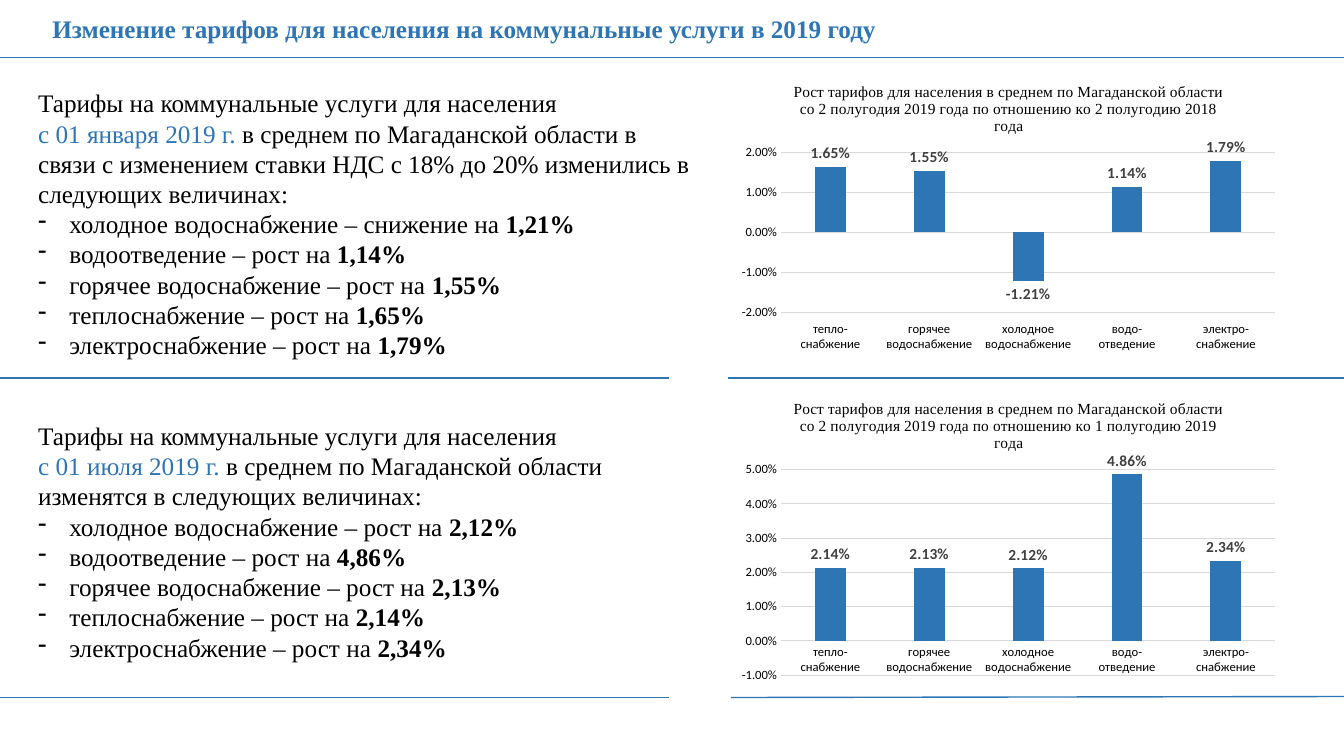
from dataclasses import dataclass

from lxml.etree import SubElement
from pptx import Presentation
from pptx.chart.data import CategoryChartData as ChartData
from pptx.dml.color import RGBColor as Color
from pptx.enum.chart import XL_CHART_TYPE as Kind
from pptx.enum.chart import XL_LABEL_POSITION as Spot
from pptx.enum.chart import XL_TICK_LABEL_POSITION as Place
from pptx.enum.chart import XL_TICK_MARK as Tick
from pptx.enum.shapes import MSO_CONNECTOR as Link
from pptx.oxml import parse_xml
from pptx.oxml.ns import nsdecls, qn
from pptx.util import Inches, Pt


@dataclass(frozen=True)
class Theme:
    blue: str = "2E75B6"
    black: str = "000000"
    dark: str = "404040"
    grid: str = "D9D9D9"
    serif: str = "Times New Roman"
    sans: str = "Calibri"
    body: int = 18
    head: int = 11
    label: int = 11
    base: int = 10
    axis: int = 9


THEME = Theme()
START = "Тарифы на коммунальные услуги для населения"
CATS = ["тепло-\nснабжение", "горячее\nводоснабжение", "холодное\nводоснабжение",
        "водо-\nотведение", "электро-\nснабжение"]
RULES = [(0, 0.57, 13.33, 0.57), (0, 3.75, 6.64, 3.75), (7.22, 3.75, 13.33, 3.75),
         (0, 6.92, 6.64, 6.92), (7.25, 6.92, 13.33, 6.91)]


def style(font, size, color, face, bold=False):
    font.size = Pt(size)
    font.color.rgb = Color.from_string(color)
    font.name = face
    font.bold = bold


def add_run(para, text, color=THEME.black, bold=False):
    run = para.add_run()
    run.text = text
    style(run.font, THEME.body, color, THEME.serif, bold)


def add_box(slide, left, top, width, height):
    frame = slide.shapes.add_textbox(
        Inches(left), Inches(top), Inches(width), Inches(height)).text_frame
    frame.word_wrap = True
    return frame


def add_rule(slide, x1, y1, x2, y2):
    rule = slide.shapes.add_connector(
        Link.STRAIGHT, Inches(x1), Inches(y1), Inches(x2), Inches(y2))
    rule.line.color.rgb = Color.from_string(THEME.blue)
    rule.line.width = Pt(1)
    SubElement(rule.element.spPr, qn("a:effectLst"))


def add_dash(para):
    props = para._p.get_or_add_pPr()
    props.set("marL", str(Inches(0.31)))
    props.set("indent", str(-Inches(0.31)))
    SubElement(props, qn("a:buChar")).set("char", "-")


def add_list(slide, top, height, date, rest, rates):
    frame = add_box(slide, 0.28, top, 6.7, height)
    add_run(frame.paragraphs[0], START)
    para = frame.add_paragraph()
    add_run(para, date, THEME.blue)
    add_run(para, rest)
    for name, rate in rates:
        para = frame.add_paragraph()
        add_dash(para)
        add_run(para, f"{name} на ")
        add_run(para, rate, bold=True)


def set_plot(chart, x, y, w, h):
    plot = chart.element.chart.plotArea
    for old in plot.findall(qn("c:layout")):
        plot.remove(old)
    parts = "".join(f'<c:{key} val="{val}"/>' for key, val in (
        ("layoutTarget", "inner"), ("xMode", "edge"), ("yMode", "edge"),
        ("x", x), ("y", y), ("w", w), ("h", h)))
    plot.insert(0, parse_xml(
        f'<c:layout {nsdecls("c")}><c:manualLayout>{parts}</c:manualLayout></c:layout>'))


def set_axes(chart, low, high, place):
    cat, val = chart.category_axis, chart.value_axis
    for axis in (cat, val):
        axis.major_tick_mark = axis.minor_tick_mark = Tick.NONE
        style(axis.tick_labels.font, THEME.axis, THEME.black, THEME.sans)
    cat.tick_label_position = place
    val.minimum_scale, val.maximum_scale, val.major_unit = low, high, 0.01
    val.tick_labels.number_format = "0.00%"
    val.tick_labels.number_format_is_linked = False
    val.format.line.fill.background()
    for line in (cat.format.line, val.major_gridlines.format.line):
        line.color.rgb = Color.from_string(THEME.grid)
        line.width = Pt(0.75)


def set_bars(chart):
    plot = chart.plots[0]
    plot.gap_width, plot.overlap = 219, -27
    plot.vary_by_categories = False
    bars = plot.series[0]
    bars.invert_if_negative = False
    bars.format.fill.solid()
    bars.format.fill.fore_color.rgb = Color.from_string(THEME.blue)
    tags = bars.data_labels
    tags.show_value = True
    tags.position = Spot.OUTSIDE_END
    tags.number_format = "0.00%"
    tags.number_format_is_linked = False
    style(tags.font, THEME.label, THEME.dark, THEME.sans, True)


def add_graph(slide, top, height, since, vals, scale, place, area):
    data = ChartData(number_format="0.00%")
    data.categories = CATS
    data.add_series("Рост тарифов", vals)
    chart = slide.shapes.add_chart(
        Kind.COLUMN_CLUSTERED, Inches(7.25), Inches(top),
        Inches(5.51), Inches(height), data).chart
    style(chart.font, THEME.base, THEME.black, THEME.sans)
    chart.has_legend = False
    chart.has_title = True
    run = chart.chart_title.text_frame.paragraphs[0].add_run()
    run.text = ("Рост тарифов для населения в среднем по Магаданской области "
                f"со 2 полугодия 2019 года по отношению ко {since} года")
    style(run.font, THEME.head, THEME.black, THEME.serif)
    chart.chart_title.include_in_layout = False
    set_axes(chart, *scale, place)
    set_bars(chart)
    set_plot(chart, *area)


def main():
    deck = Presentation()
    deck.slide_width, deck.slide_height = Inches(13.33), Inches(7.5)
    slide = deck.slides.add_slide(deck.slide_layouts[6])
    for rule in RULES:
        add_rule(slide, *rule)
    head = add_box(slide, 0.42, 0.08, 12.49, 0.4)
    add_run(head.paragraphs[0],
            "Изменение тарифов для населения на коммунальные услуги в 2019 году",
            THEME.blue, True)
    add_list(slide, 0.82, 2.83, "с 01 января 2019 г.",
             " в среднем по Магаданской области в связи с изменением ставки НДС "
             "с 18% до 20% изменились в следующих величинах:",
             [("холодное водоснабжение – снижение", "1,21%"),
              ("водоотведение – рост", "1,14%"),
              ("горячее водоснабжение – рост", "1,55%"),
              ("теплоснабжение – рост", "1,65%"),
              ("электроснабжение – рост", "1,79%")])
    add_list(slide, 4.12, 2.52, "с 01 июля 2019 г.",
             " в среднем по Магаданской области изменятся в следующих величинах:",
             [("холодное водоснабжение – рост", "2,12%"),
              ("водоотведение – рост", "4,86%"),
              ("горячее водоснабжение – рост", "2,13%"),
              ("теплоснабжение – рост", "2,14%"),
              ("электроснабжение – рост", "2,34%")])
    add_graph(slide, 0.68, 2.88, "2 полугодию 2018",
              [0.0165, 0.0155, -0.0121, 0.0114, 0.0179],
              (-0.02, 0.02), Place.LOW, (0.09, 0.29, 0.89, 0.55))
    add_graph(slide, 3.82, 3, "1 полугодию 2019",
              [0.0214, 0.0213, 0.0212, 0.0486, 0.0234],
              (-0.01, 0.05), Place.NEXT_TO_AXIS, (0.09, 0.28, 0.89, 0.68))
    deck.save("out.pptx")


if __name__ == "__main__":
    main()
